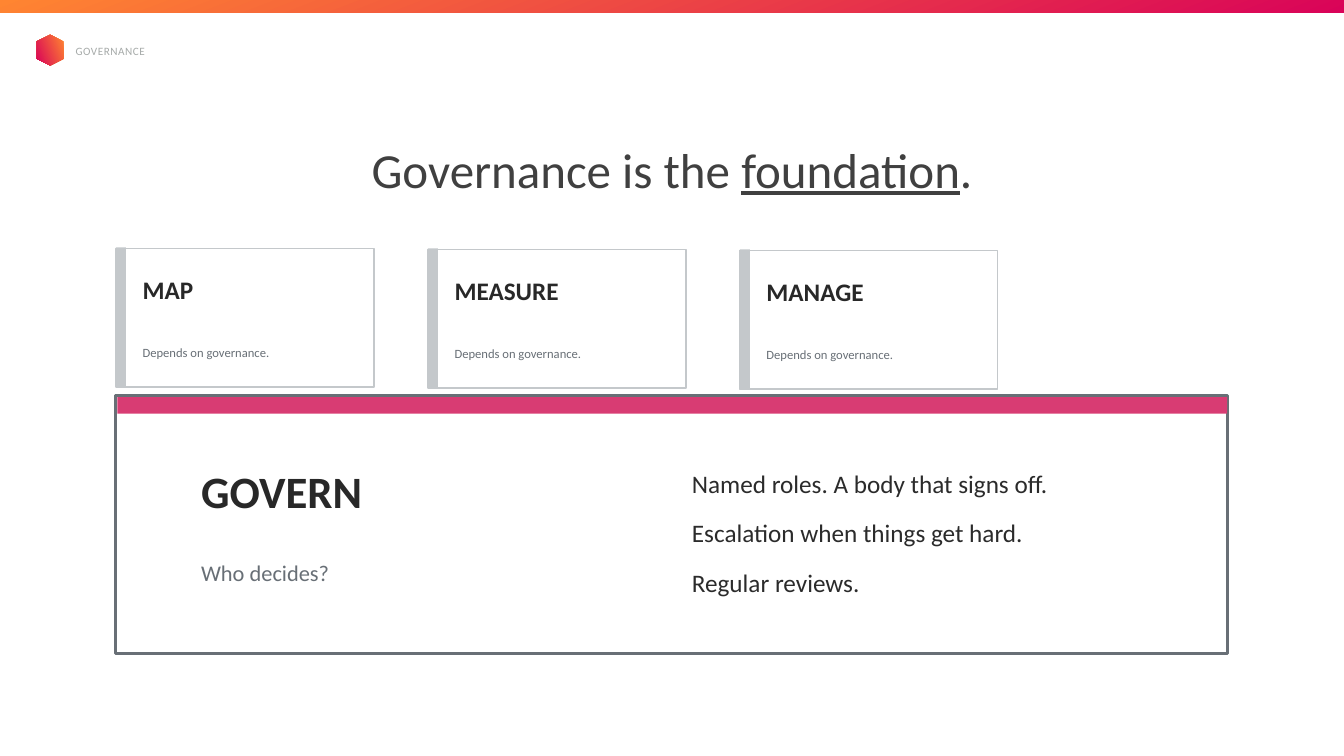
from pptx import Presentation
from pptx.dml.color import RGBColor
from pptx.enum.shapes import MSO_SHAPE
from pptx.enum.text import MSO_ANCHOR, MSO_AUTO_SIZE, PP_ALIGN
from pptx.util import Inches, Pt

RECTANGLE = MSO_SHAPE.RECTANGLE
HEXAGON = MSO_SHAPE.HEXAGON
MIDDLE, BOTTOM = MSO_ANCHOR.MIDDLE, MSO_ANCHOR.BOTTOM
GROW = MSO_AUTO_SIZE.SHAPE_TO_FIT_TEXT
CENTER = PP_ALIGN.CENTER

FONT = "Calibri"
ORANGE = RGBColor(0xFF, 0x85, 0x31)
MAGENTA = RGBColor(0xD9, 0x03, 0x59)
PINK = RGBColor(0xD8, 0x3C, 0x73)
LIGHT_GRAY = RGBColor(0xC4, 0xC8, 0xCB)
SLATE = RGBColor(0x68, 0x6F, 0x76)
LABEL_GRAY = RGBColor(0xA6, 0xAA, 0xA9)
TITLE_GRAY = RGBColor(0x40, 0x40, 0x40)
INK = RGBColor(0x28, 0x28, 0x28)
BODY_INK = RGBColor(0x2B, 0x2B, 0x2B)


def add_block(shapes, box, kind=RECTANGLE, fill=None, line=None, line_width=0):
    """Add a preset shape; a list of two colors as fill gives a gradient."""
    shape = shapes.add_shape(kind, *[Inches(length) for length in box])
    shape.shadow.inherit = False
    if isinstance(fill, list):
        shape.fill.gradient()
        shape.fill.gradient_angle = 291
        for stop, color in zip(shape.fill.gradient_stops, fill):
            stop.color.rgb = color
    elif fill is not None:
        shape.fill.solid()
        shape.fill.fore_color.rgb = fill
    else:
        shape.fill.background()
    if line is None:
        shape.line.fill.background()
    else:
        shape.line.color.rgb = line
        shape.line.width = Pt(line_width)
    return shape


def add_text(shapes, box, lines, inset=0, wrap=True, anchor=MIDDLE, grow=True):
    """Add a text box; each line is (text, size, color, bold)."""
    frame = shapes.add_textbox(*[Inches(length) for length in box]).text_frame
    frame.text = "\n".join(line[0] for line in lines)
    frame.word_wrap = wrap
    frame.vertical_anchor = anchor
    if grow:
        frame.auto_size = GROW
    frame.margin_left = frame.margin_right = Inches(inset)
    frame.margin_top = frame.margin_bottom = Inches(inset)
    for paragraph, (_, size, color, bold) in zip(frame.paragraphs, lines):
        for run in paragraph.runs:
            run.font.name = FONT
            run.font.size = Pt(size)
            run.font.color.rgb = color
            run.font.bold = bold
    return frame


presentation = Presentation()
presentation.slide_width = Inches(26.67)
presentation.slide_height = Inches(15)
slide = presentation.slides.add_slide(presentation.slide_layouts[6])
shapes = slide.shapes

# Top band, plain hexagon mark and section label
add_block(shapes, (0, 0, 26.67, 0.25), fill=[ORANGE, MAGENTA])
mark = add_block(shapes, (0.69, 0.73, 0.61, 0.53), HEXAGON, fill=[ORANGE, MAGENTA])
mark.rotation = 90
label = add_text(shapes, (1.5, 0.88, 14.97, 0.27),
                 [("GOVERNANCE", 16, LABEL_GRAY, False)])
label.paragraphs[0].runs[0].font._element.set("spc", "80")

# Title with one underlined word
title = add_text(shapes, (0.07, 2.69, 26.53, 1.24),
                 [("Governance is the ", 70, TITLE_GRAY, False)],
                 anchor=BOTTOM, grow=False)
title_paragraph = title.paragraphs[0]
title_paragraph.alignment = CENTER
for text, underline in (("foundation", True), (".", False)):
    run = title_paragraph.add_run()
    run.text = text
    run.font.name = FONT
    run.font.size = Pt(70)
    run.font.color.rgb = TITLE_GRAY
    run.font.underline = underline

# Three cards that rest on governance
for index, name in enumerate(("MAP", "MEASURE", "MANAGE")):
    left = 2.3 + index * 6.19
    top = 4.93 + index * 0.02
    card = shapes.add_group_shape().shapes
    frame = add_text(card, (left + 0.03, top, 5, 2.73),
                     [(name, 36, INK, True),
                      ("Depends on governance.", 18, SLATE, False)], inset=0.5)
    frame.paragraphs[1].space_before = Pt(58.5)
    add_block(card, (left, top, 5.12, 2.75), line=LIGHT_GRAY, line_width=2)
    add_block(card, (left, top - 0.02, 0.2, 2.76), fill=LIGHT_GRAY)

# Foundation panel
govern = add_text(shapes, (3.49, 8.7, 4.5, 3.43),
                  [("GOVERN", 64, INK, True),
                   ("Who decides?", 32, SLATE, False)], inset=0.5, wrap=False)
govern.paragraphs[1].space_before = Pt(58.5)
add_block(shapes, (2.3, 7.85, 22.06, 5.12), line=SLATE, line_width=4)
add_block(shapes, (2.33, 7.88, 22.02, 0.33), fill=PINK)

# What governance needs
needs = ("Named roles. A body that signs off.",
         "Escalation when things get hard.",
         "Regular reviews.")
needs_frame = add_text(shapes, (13.67, 8.87, 7.78, 3.09),
                       [(need, 36, BODY_INK, False) for need in needs],
                       inset=0.06, wrap=False)
for paragraph in needs_frame.paragraphs:
    paragraph.line_spacing = 1.5
    paragraph.space_after = Pt(6)

presentation.save("out.pptx")
